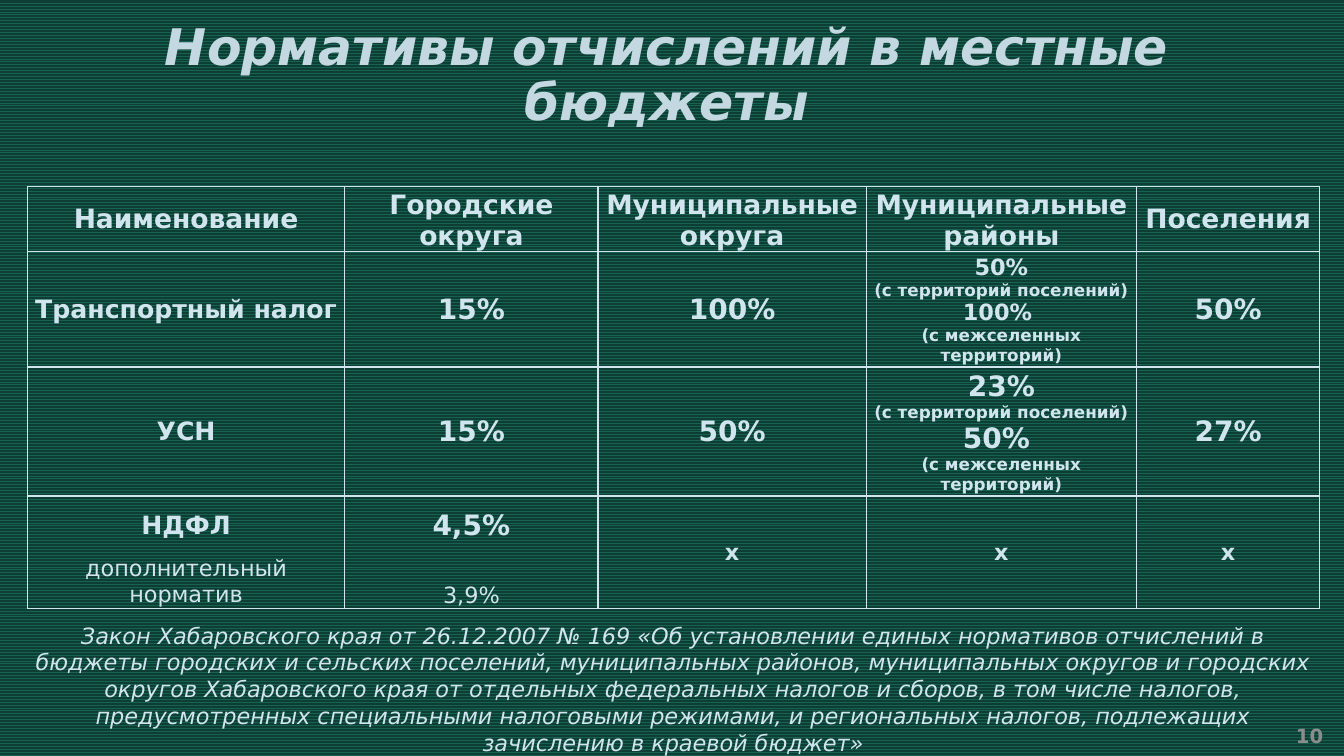
import pptx
import pptx.util
import pptx.dml.color
import pptx.enum.dml
import pptx.enum.text
import pptx.oxml
import pptx.oxml.ns

Cm = pptx.util.Cm
Pt = pptx.util.Pt
ALIGN = pptx.enum.text.PP_ALIGN
ANCHOR = pptx.enum.text.MSO_ANCHOR
FIT = pptx.enum.text.MSO_AUTO_SIZE


def paint(code):
    return pptx.dml.color.RGBColor.from_string(code)


class Deck:
    """Holds the text style and the current slide."""

    font = "DejaVu Sans"
    ink = "D1E5EF"
    edge = "D0E5EE"

    def __init__(self, show):
        self.slide = show.slides.add_slide(show.slide_layouts[5])

    def back(self, fore, base):
        fill = self.slide.background.fill
        fill.patterned()
        fill.pattern = pptx.enum.dml.MSO_PATTERN.ZIG_ZAG
        fill.fore_color.rgb = paint(fore)
        fill.back_color.rgb = paint(base)

    def run(self, para, text, size, bold=True, italic=False, color=None):
        run = para.add_run()
        run.text = text
        font = run.font
        font.name, font.size = self.font, Pt(size)
        font.bold, font.italic = bold, italic
        font.color.rgb = paint(color or self.ink)

    def place(self, shape, box, text, size, align=ALIGN.CENTER,
              anchor=ANCHOR.TOP, fit=FIT.NONE, gap=None, **look):
        shape.left, shape.top, shape.width, shape.height = map(Cm, box)
        frame = shape.text_frame
        frame.word_wrap = True
        frame.auto_size = fit
        frame.vertical_anchor = anchor
        para = frame.paragraphs[0]
        para.alignment = align
        para.line_spacing = gap
        self.run(para, text, size, **look)

    def title(self, box, text, size, **look):
        self.place(self.slide.shapes.title, box, text, size, **look)

    def label(self, box, text, size, **look):
        shape = self.slide.shapes.add_textbox(*map(Cm, box))
        self.place(shape, box, text, size, **look)

    def border(self, cell, skip):
        props = cell._tc.get_or_add_tcPr()
        for side in "LRTB":
            fill = "<a:noFill/>" if side == skip else (
                f'<a:solidFill><a:srgbClr val="{self.edge}"/></a:solidFill>')
            props.append(pptx.oxml.parse_xml(
                f'<a:ln{side} {pptx.oxml.ns.nsdecls("a")} w="12700">{fill}</a:ln{side}>'))

    def cell(self, cell, paras, anchor, skip):
        self.border(cell, skip)
        cell.fill.background()
        cell.vertical_anchor = anchor
        cell.margin_left = cell.margin_right = cell.margin_top = Cm(0.03)
        cell.margin_bottom = 0
        frame = cell.text_frame
        for i, lines in enumerate(paras):
            para = frame.add_paragraph() if i else frame.paragraphs[0]
            para.alignment = ALIGN.CENTER
            for j, (text, size, bold) in enumerate(lines):
                if j:
                    para.add_line_break()
                self.run(para, text, size, bold)

    def table(self, left, top, wides, highs, rows, low, joins, open_cells):
        grid = self.slide.shapes.add_table(
            len(highs), len(wides), Cm(left), Cm(top),
            Cm(sum(wides)), Cm(sum(highs))).table
        grid.first_row = grid.horz_banding = False
        for col, wide in zip(grid.columns, wides):
            col.width = Cm(wide)
        for row, high in zip(grid.rows, highs):
            row.height = Cm(high)
        for r, row in enumerate(rows):
            for c, paras in enumerate(row):
                anchor = ANCHOR.BOTTOM if (r, c) in low else ANCHOR.MIDDLE
                self.cell(grid.cell(r, c), paras, anchor, open_cells.get((r, c)))
        for first, last in joins:
            grid.cell(*first).merge(grid.cell(*last))


def one(text, size, bold=True):
    return [[(text, size, bold)]]


def split(near, far, size):
    return [[(near, size, True), ("(с территорий поселений)", 12, True)],
            [(far + " ", size, True), ("(с межселенных территорий)", 12, True)]]


HEADS = ["Наименование", "Городские округа", "Муниципальные округа",
         "Муниципальные районы", "Поселения"]
ROWS = [
    [one(head, 19) for head in HEADS],
    [one("Транспортный налог", 18), one("15%", 20), one("100%", 20),
     split("50%", "100%", 16), one("50%", 20)],
    [one("УСН", 18), one("15%", 20), one("50%", 20),
     split("23%", "50%", 20), one("27%", 20)],
    [one("НДФЛ", 18), one("4,5%", 20)] + [one("х", 16)] * 3,
    [one("дополнительный норматив", 16, False), one("3,9%", 16, False)] + [[]] * 3,
]
LAW = (
    "Закон Хабаровского края от 26.12.2007 № 169 «Об установлении единых "
    "нормативов отчислений в бюджеты городских и сельских поселений, "
    "муниципальных районов, муниципальных округов и городских округов "
    "Хабаровского края от отдельных федеральных налогов и сборов, в том числе "
    "налогов, предусмотренных специальными налоговыми режимами, и региональных "
    "налогов, подлежащих зачислению в краевой бюджет»")


def main():
    show = pptx.Presentation()
    show.slide_width, show.slide_height = Cm(33.87), Cm(19.05)
    deck = Deck(show)
    deck.back("176353", "0E3D33")
    deck.title((0.36, 0.43, 32.89, 3.02), "Нормативы отчислений в местные бюджеты",
               36, fit=FIT.SHAPE_TO_FIT_TEXT, gap=0.9, italic=True, color="C4D8E1")
    deck.label((25.98, 18.03, 7.62, 1.02), "10", 14, align=ALIGN.RIGHT,
               anchor=ANCHOR.MIDDLE, color="8C8C8C")
    deck.table(
        0.69, 4.7, [8, 6.38, 6.76, 6.81, 4.62], [1.64, 2.9, 3.25, 1.45, 1.35], ROWS,
        low=[(0, 1), (0, 2), (0, 3), (4, 1)],
        joins=[((3, c), (4, c)) for c in (2, 3, 4)],
        open_cells={(r, c): side for r, side in ((3, "B"), (4, "T")) for c in (0, 1)})
    deck.label((0.33, 15.54, 33.27, 3), LAW, 16, fit=FIT.SHAPE_TO_FIT_TEXT,
               bold=False, italic=True)
    show.save("out.pptx")


if __name__ == "__main__":
    main()
